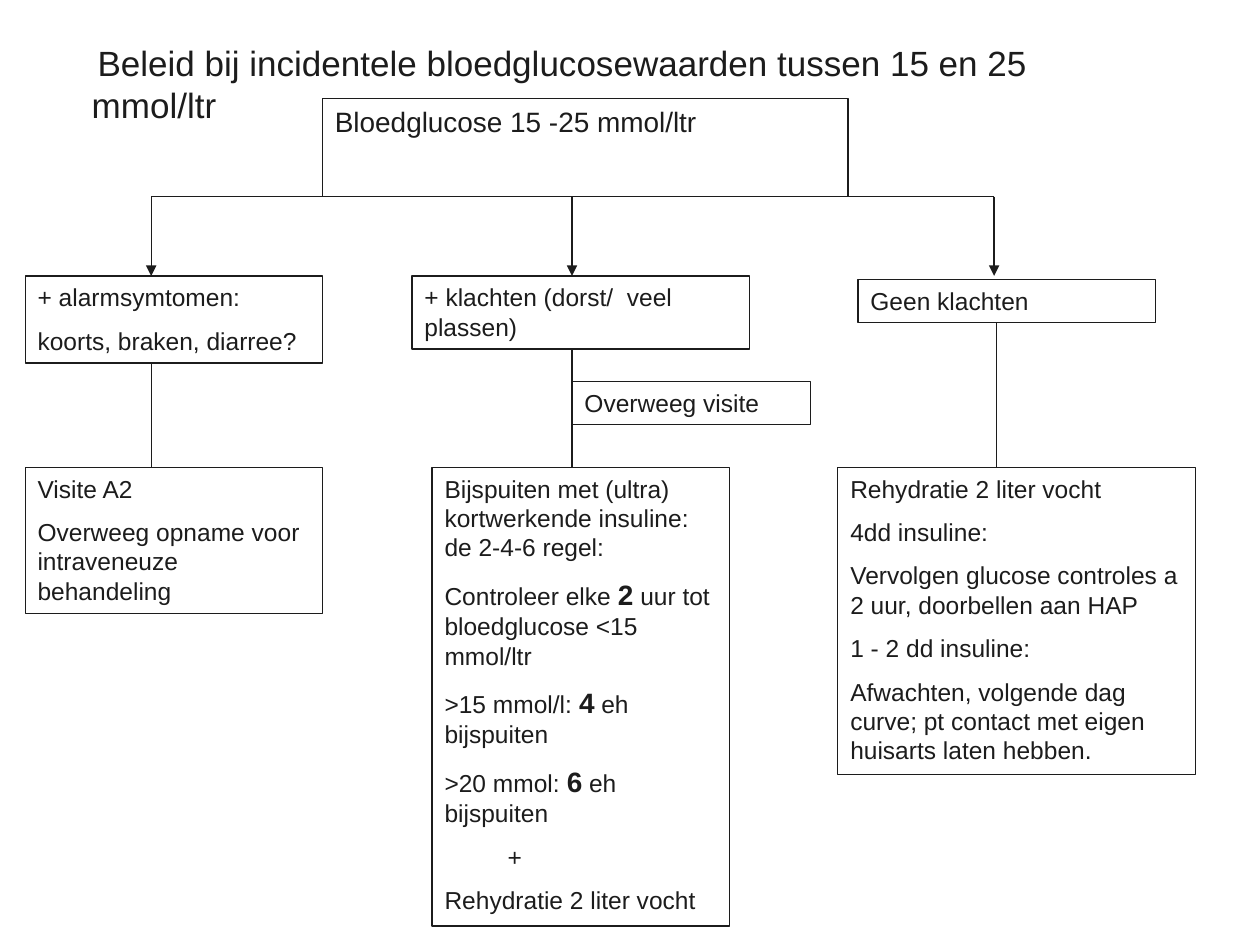
from lxml import etree
from pptx import Presentation
from pptx.dml.color import RGBColor
from pptx.enum.shapes import MSO_CONNECTOR, MSO_SHAPE
from pptx.enum.text import MSO_ANCHOR, PP_ALIGN
from pptx.oxml.ns import qn
from pptx.util import Inches, Pt

RECTANGLE = MSO_SHAPE.RECTANGLE
STRAIGHT = MSO_CONNECTOR.STRAIGHT
TOP = MSO_ANCHOR.TOP
LEFT = PP_ALIGN.LEFT

INK = "1C1C1C"
FONT = "Arial"
BODY_SIZE = 14
LARGE_SIZE = 16
TITLE_SIZE = 20
LINE_WIDTH = 0.75

# Heights shared by the parts of the flow chart
BRANCH_Y = 1.56
CONDITION_Y = 2.19
ACTION_Y = 3.71
ALARM_X, COMPLAINT_X, NO_COMPLAINT_X = 1.2, 4.54, 7.89


def colour(hex_string):
    return RGBColor.from_string(hex_string)


def add_span(para, text, size=BODY_SIZE, bold=False):
    span = para.add_run()
    span.text = text
    span.font.name = FONT
    span.font.size = Pt(size)
    span.font.bold = bold
    span.font.color.rgb = colour(INK)


def fill_text(frame, paragraphs):
    """Each paragraph is a list of (text, size, bold) spans."""
    frame.word_wrap = True
    frame.vertical_anchor = TOP
    for index, spans in enumerate(paragraphs):
        para = frame.add_paragraph() if index else frame.paragraphs[0]
        para.alignment = LEFT
        if index:
            largest = max(size for _, size, _ in spans)
            para.space_before = Pt(9 if largest > BODY_SIZE else 8)
        for span in spans:
            add_span(para, *span)


def plain(*texts, size=BODY_SIZE):
    return [[(text, size, False)] for text in texts]


def with_number(before, number, after):
    return [(before, BODY_SIZE, False), (number, LARGE_SIZE, True),
            (after, BODY_SIZE, False)]


def add_box(slide, left, top, width, height, paragraphs):
    box = slide.shapes.add_shape(
        RECTANGLE, Inches(left), Inches(top), Inches(width), Inches(height))
    box.shadow.inherit = False
    box.fill.background()
    box.line.color.rgb = colour(INK)
    box.line.width = Pt(LINE_WIDTH)
    fill_text(box.text_frame, paragraphs)


def add_line(slide, start, end, arrow=False):
    line = slide.shapes.add_connector(
        STRAIGHT, *(Inches(value) for value in start + end))
    line.line.color.rgb = colour(INK)
    line.line.width = Pt(LINE_WIDTH)
    if arrow:
        outline = line.line._get_or_add_ln()
        etree.SubElement(outline, qn("a:tailEnd"), type="triangle")
    etree.SubElement(line._element.spPr, qn("a:effectLst"))


def add_title(slide):
    box = slide.shapes.add_textbox(
        Inches(0.63), Inches(0.28), Inches(8.5), Inches(0.75))
    fill_text(box.text_frame, [[
        (" ", 12, False),
        ("Beleid bij incidentele bloedglucosewaarden tussen 15 en 25 mmol/ltr",
         TITLE_SIZE, False),
    ]])


def main():
    deck = Presentation()
    deck.slide_width, deck.slide_height = Inches(10), Inches(7.5)
    slide = deck.slides.add_slide(deck.slide_layouts[6])

    # Title and starting point
    add_title(slide)
    add_box(slide, 2.56, 0.78, 4.17, 0.78,
            plain("Bloedglucose 15 -25 mmol/ltr", size=LARGE_SIZE))

    # Branch line with an arrow to each condition
    add_line(slide, (NO_COMPLAINT_X, BRANCH_Y), (ALARM_X, BRANCH_Y))
    for x in (ALARM_X, COMPLAINT_X, NO_COMPLAINT_X):
        add_line(slide, (x, BRANCH_Y), (x, CONDITION_Y), arrow=True)

    # Conditions
    add_box(slide, 0.2, CONDITION_Y, 2.36, 0.69,
            plain("+ alarmsymtomen:", "koorts, braken, diarree?"))
    add_box(slide, 3.27, CONDITION_Y, 2.68, 0.58,
            plain("+ klachten (dorst/  veel plassen)"))
    add_box(slide, 6.81, 2.22, 2.36, 0.34, plain("Geen klachten"))

    # Lines from conditions to actions
    for x, top in ((ALARM_X, 2.88), (COMPLAINT_X, 2.77), (7.91, 2.56)):
        add_line(slide, (x, top), (x, ACTION_Y))
    add_box(slide, COMPLAINT_X, 3.03, 1.89, 0.34, plain("Overweeg visite"))

    # Actions
    add_box(slide, 0.2, ACTION_Y, 2.36, 1.16,
            plain("Visite A2",
                  "Overweeg opname voor intraveneuze behandeling"))
    add_box(slide, 3.43, ACTION_Y, 2.36, 3.64, [
        *plain("Bijspuiten met (ultra) kortwerkende insuline: "
               "de 2-4-6 regel:"),
        with_number("Controleer elke ", "2",
                    " uur tot bloedglucose <15 mmol/ltr"),
        with_number(">15 mmol/l: ", "4", " eh bijspuiten"),
        with_number(">20 mmol: ", "6", " eh bijspuiten"),
        *plain("\t+", "Rehydratie 2 liter vocht"),
    ])
    add_box(slide, 6.65, ACTION_Y, 2.84, 2.44, plain(
        "Rehydratie 2 liter vocht",
        "4dd insuline:",
        "Vervolgen glucose controles a 2 uur, doorbellen aan HAP",
        "1 - 2 dd insuline:",
        "Afwachten, volgende dag curve; pt contact met eigen huisarts "
        "laten hebben."))

    deck.save("out.pptx")


if __name__ == "__main__":
    main()
